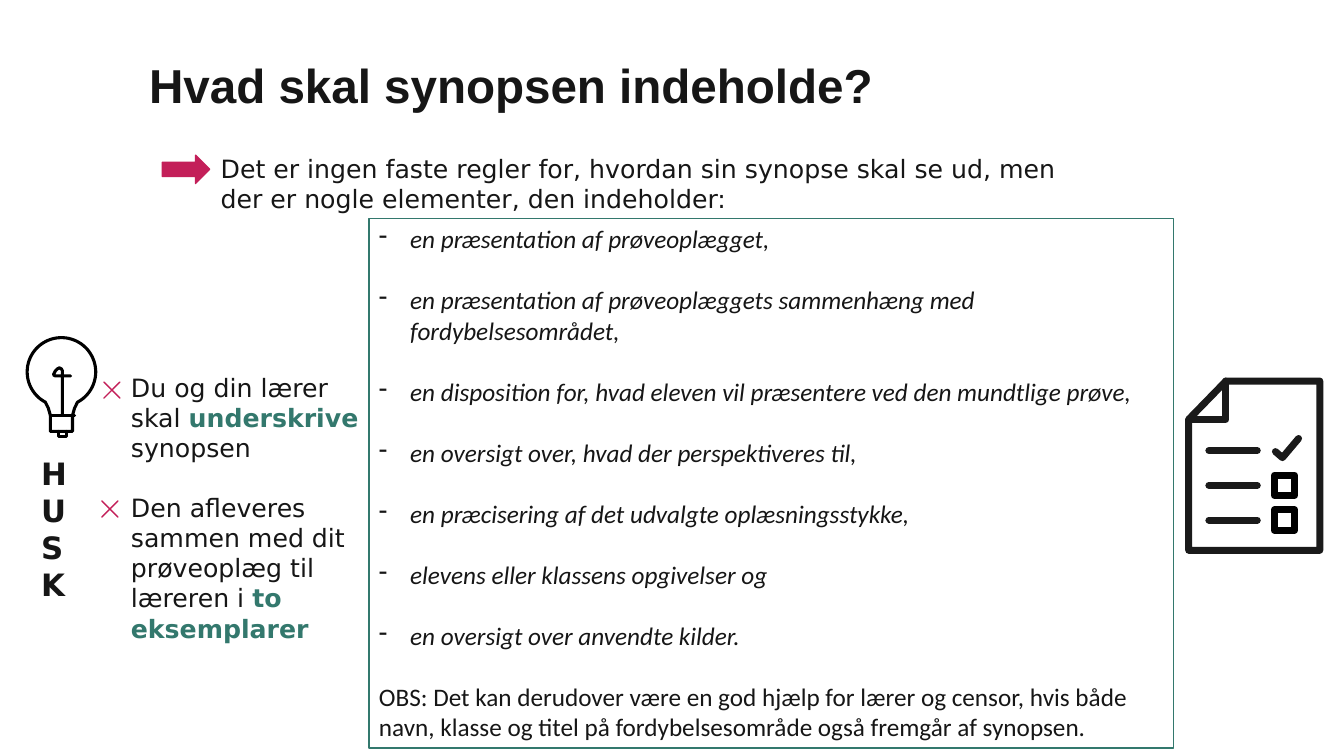
from dataclasses import dataclass
from math import cos, radians, sin

from lxml import etree
from pptx import Presentation
from pptx.dml.color import RGBColor as RGB
from pptx.enum.shapes import MSO_CONNECTOR as CONN, MSO_SHAPE as SHAPE
from pptx.enum.text import MSO_ANCHOR as ANCHOR, PP_ALIGN as ALIGN
from pptx.oxml.ns import qn
from pptx.util import Inches, Pt


@dataclass(frozen=True)
class Theme:
    ink: RGB = RGB(0x16, 0x16, 0x16)
    icon: RGB = RGB(0x1A, 0x1A, 0x1A)
    black: RGB = RGB(0, 0, 0)
    green: RGB = RGB(0x33, 0x78, 0x6D)
    pink: RGB = RGB(0xC3, 0x1F, 0x59)
    title_font: str = "Arial"
    body_font: str = "DejaVu Sans"
    list_font: str = "Calibri"
    title_size: int = 34
    husk_size: int = 22
    body_size: int = 18


theme = Theme()


def write(p, text, font, size, bold=False, italic=False, color=theme.ink):
    """Append one formatted run to a paragraph."""
    r = p.add_run()
    r.text = text
    r.font.name, r.font.size = font, Pt(size)
    r.font.bold, r.font.italic = bold, italic
    r.font.color.rgb = color


def stroke(shapes, points, color, width, close=False):
    """Draw a round-capped line through points given in inches."""
    pts = [(Inches(x), Inches(y)) for x, y in points]
    if len(pts) == 2:
        sp = shapes.add_connector(CONN.STRAIGHT, *pts[0], *pts[1])
        etree.SubElement(sp._element.spPr, qn("a:effectLst"))
    else:
        builder = shapes.build_freeform(*pts[0])
        builder.add_line_segments(pts[1:], close=close)
        sp = builder.convert_to_shape()
        sp.shadow.inherit = False
        sp.fill.background()
    sp.line.color.rgb = color
    sp.line.width = Pt(width)
    ln = sp.line._get_or_add_ln()
    ln.set("cap", "rnd")
    etree.SubElement(ln, qn("a:round"))


prs = Presentation()
prs.slide_width, prs.slide_height = Inches(13.33), Inches(7.5)
s = prs.slides.add_slide(prs.slide_layouts[6])

# Title
title = s.shapes.add_textbox(Inches(1.48), Inches(0.65), Inches(10.54), Inches(0.37))
tf = title.text_frame
tf.word_wrap = True
tf.margin_left = tf.margin_right = tf.margin_top = tf.margin_bottom = 0
p = tf.paragraphs[0]
p.line_spacing = 0.83
write(p, "Hvad skal synopsen indeholde?", theme.title_font, theme.title_size, bold=True)

# Introduction with its arrow
intro = s.shapes.add_textbox(Inches(2.09), Inches(1.47), Inches(8.5), Inches(0.71))
intro.text_frame.word_wrap = True
write(intro.text_frame.paragraphs[0],
      "Det er ingen faste regler for, hvordan sin synopse skal se ud, "
      "men der er nogle elementer, den indeholder:",
      theme.body_font, theme.body_size)

arrow = s.shapes.add_shape(SHAPE.RIGHT_ARROW, Inches(1.61), Inches(1.54),
                           Inches(0.47), Inches(0.28))
arrow.shadow.inherit = False
arrow.fill.solid()
arrow.fill.fore_color.rgb = arrow.line.color.rgb = theme.pink
arrow.line.width = Pt(1)

# Framed list of elements
elements = [
    "en præsentation af prøveoplægget,",
    "en præsentation af prøveoplæggets sammenhæng med fordybelsesområdet,",
    "en disposition for, hvad eleven vil præsentere ved den mundtlige prøve,",
    "en oversigt over, hvad der perspektiveres til,",
    "en præcisering af det udvalgte oplæsningsstykke,",
    "elevens eller klassens opgivelser og",
    "en oversigt over anvendte kilder.",
]
frame = s.shapes.add_shape(SHAPE.RECTANGLE, Inches(3.66), Inches(2.17),
                           Inches(7.98), Inches(5.25))
frame.shadow.inherit = False
frame.fill.background()
frame.line.color.rgb = theme.green
frame.line.width = Pt(1)
tf = frame.text_frame
tf.word_wrap = True
tf.vertical_anchor = ANCHOR.TOP
for i, element in enumerate(elements):
    p = tf.add_paragraph() if i else tf.paragraphs[0]
    pPr = p._p.get_or_add_pPr()
    pPr.set("marL", str(Inches(0.31)))
    pPr.set("indent", str(-Inches(0.31)))
    etree.SubElement(pPr, qn("a:buFontTx"))
    etree.SubElement(pPr, qn("a:buChar")).set("char", "-")
    write(p, element, theme.list_font, theme.body_size, italic=True)
write(tf.add_paragraph(),
      "OBS: Det kan derudover være en god hjælp for lærer og censor, hvis både navn, "
      "klasse og titel på fordybelsesområde også fremgår af synopsen.",
      theme.list_font, theme.body_size)
for i, p in enumerate(tf.paragraphs):
    p.alignment = ALIGN.LEFT
    if i:
        p.space_before = Pt(22)

# Checklist icon
checklist = s.shapes.add_group_shape().shapes
stroke(checklist, [(12.16, 3.78), (13.09, 3.78), (13.09, 5.46), (11.79, 5.46),
                   (11.79, 4.16)], theme.icon, 5, close=True)
stroke(checklist, [(11.79, 4.16), (12.16, 4.16), (12.16, 3.78)], theme.icon, 5)
stroke(checklist, [(12.65, 4.48), (12.72, 4.54), (12.88, 4.35)], theme.icon, 5)
for row in range(3):
    y = 4.47 + 0.345 * row
    stroke(checklist, [(11.99, y), (12.47, y)], theme.icon, 5)
    if row:
        top, bottom = y - 0.1, y + 0.1
        stroke(checklist, [(12.64, top), (12.84, top), (12.84, bottom), (12.64, bottom)],
               theme.black, 5, close=True)

# Reminder heading
husk = s.shapes.add_textbox(Inches(0.31), Inches(4.46), Inches(0.64), Inches(1.85))
husk.text_frame.word_wrap = False
husk.text_frame._txBody.bodyPr.set("vert", "wordArtVert")
write(husk.text_frame.paragraphs[0], "HUSK", theme.body_font, theme.husk_size, bold=True)

# Reminders: (text, emphasised) pieces
reminders = [
    [("Du og din lærer skal ", False), ("underskrive", True), (" synopsen", False)],
    [("Den afleveres sammen med dit prøveoplæg til læreren i ", False),
     ("to eksemplarer", True)],
]
notes = s.shapes.add_textbox(Inches(1.2), Inches(3.64), Inches(2.68), Inches(2.83))
tf = notes.text_frame
tf.word_wrap = True
for i, pieces in enumerate(reminders):
    p = tf.add_paragraph() if i else tf.paragraphs[0]
    if i:
        p.space_before = Pt(21)
    for text, emphasised in pieces:
        write(p, text, theme.body_font, theme.body_size, bold=emphasised,
              color=theme.green if emphasised else theme.ink)

for x, y in [(1.11, 3.87), (1.09, 5.05)]:
    cross = s.shapes.add_group_shape().shapes
    for rise in (-0.08, 0.08):
        stroke(cross, [(x - 0.08, y - rise), (x + 0.08, y + rise)], theme.pink, 1)

# Light bulb icon
bulb = s.shapes.add_group_shape().shapes
cx, cy, radius = 0.61, 3.69, 0.34
glass = [(cx - radius * sin(radians(a)), cy + radius * cos(radians(a)))
         for a in range(28, 333, 4)]
neck = [(0.11, 4.28), (0.11, 4.12), (0.13, 4.05)]
outline = ([(cx - dx, y) for dx, y in neck] + glass
           + [(cx + dx, y) for dx, y in reversed(neck)])
filament = [(0.7, 3.73), (0.55, 3.73), (0.53, 3.72), (0.55, 3.68), (0.57, 3.66),
            (0.59, 3.65), (0.61, 3.66), (0.62, 3.68), (0.62, 4.12)]
plug = [(0.58, 4.28), (0.58, 4.33), (0.66, 4.33), (0.66, 4.28)]
stroke(bulb, outline, theme.black, 2.2, close=True)
stroke(bulb, [(0.5, 4.12), (0.74, 4.12)], theme.black, 2.2)
stroke(bulb, filament, theme.black, 2.2)
stroke(bulb, plug, theme.black, 2.2)

prs.save("out.pptx")
